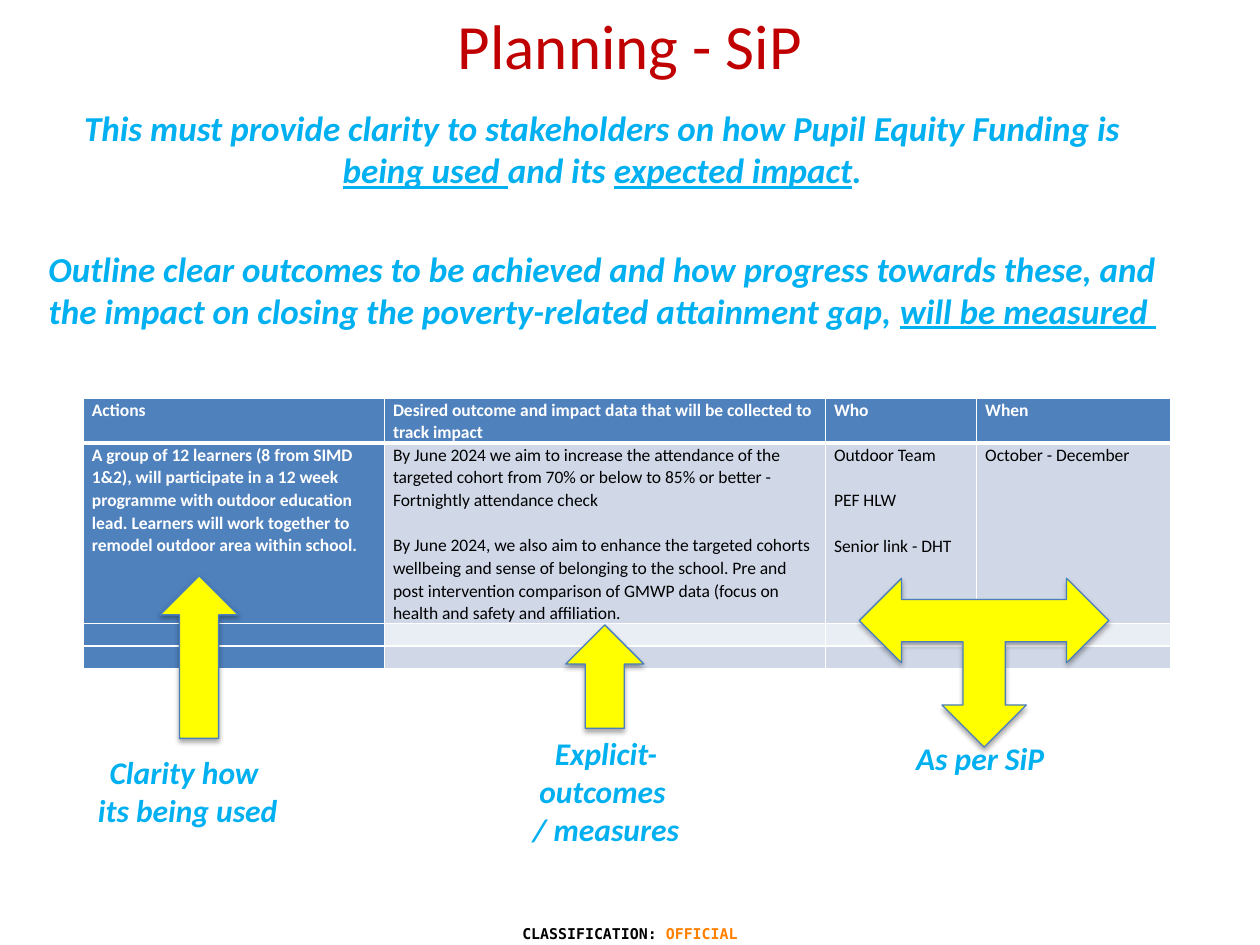
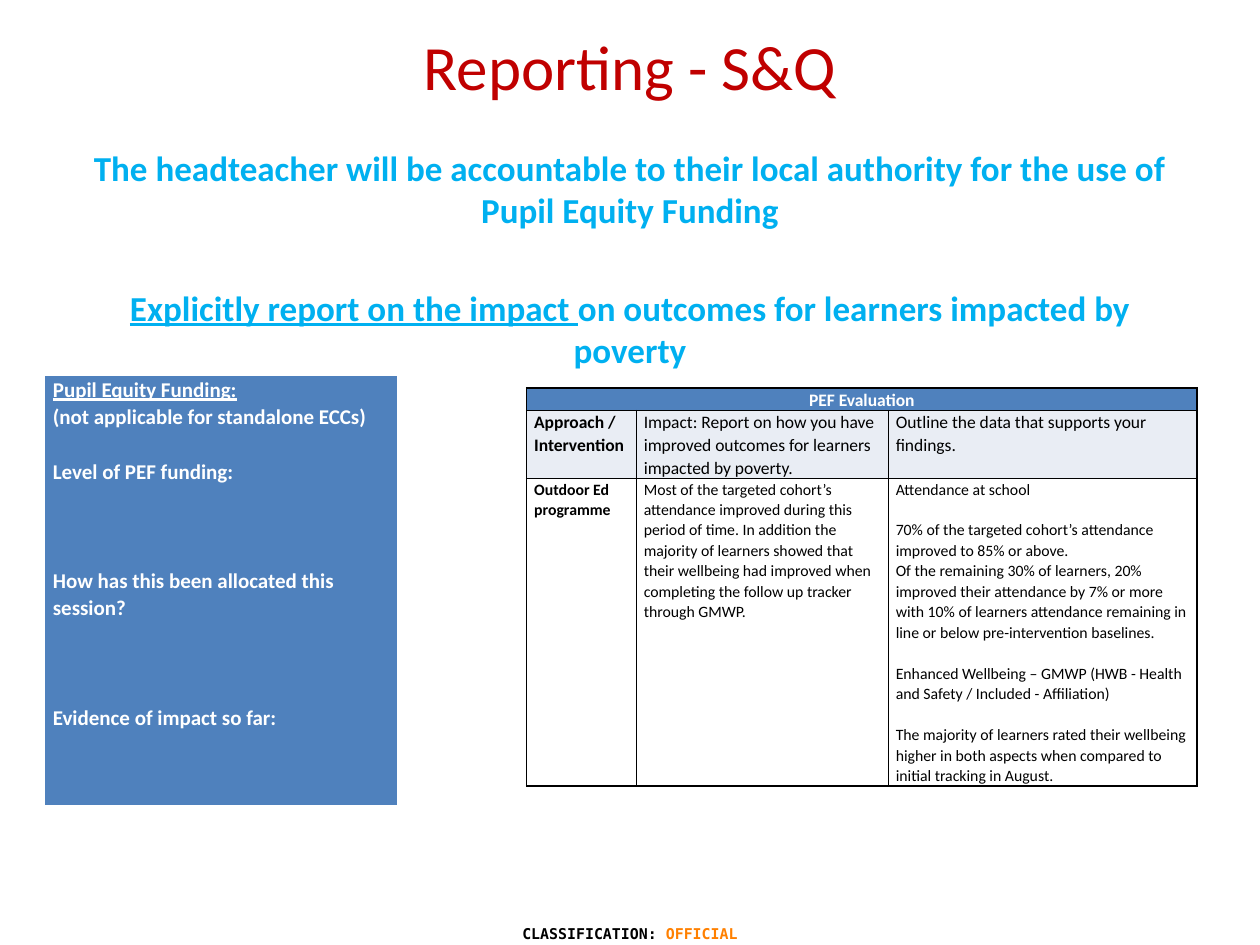
from dataclasses import dataclass
from typing import NamedTuple

from lxml.etree import SubElement
from pptx import Presentation
from pptx.dml.color import RGBColor
from pptx.enum.shapes import MSO_SHAPE as Preset
from pptx.enum.text import PP_ALIGN as Align
from pptx.oxml.ns import qn
from pptx.util import Inches, Pt

WIDTH, HEIGHT = Inches(10), Inches(7.5)
COLUMN, ROW = WIDTH / 100, HEIGHT / 75

RED = RGBColor(0xC0, 0x00, 0x00)
CYAN = RGBColor(0x00, 0xB0, 0xF0)
ORANGE = RGBColor(0xFF, 0x80, 0x00)
YELLOW = RGBColor(0xFF, 0xFF, 0x00)
BLACK = RGBColor(0x00, 0x00, 0x00)
WHITE = RGBColor(0xFF, 0xFF, 0xFF)
BLUE = RGBColor(0x4F, 0x81, 0xBD)
OUTLINE = RGBColor(0x4B, 0x7E, 0xBC)
PALE = RGBColor(0xD0, 0xD8, 0xE8)
PALER = RGBColor(0xE9, 0xED, 0xF4)

BLANK_LINE = 1.3
MARK = "_"


class Box(NamedTuple):
    left: float
    top: float
    width: float
    height: float

    def place(self) -> tuple[int, int, int, int]:
        return (round(self.left * COLUMN), round(self.top * ROW),
                round(self.width * COLUMN), round(self.height * ROW))


class Line(NamedTuple):
    text: str
    gap: float = 0


@dataclass(frozen=True)
class Cell:
    lines: tuple[Line, ...] = ()
    fill: RGBColor = BLUE
    color: RGBColor = WHITE
    bold: bool = True
    size: float = 10
    align: Align = Align.LEFT
    bottom: float = 1


@dataclass(frozen=True)
class Grid:
    left: float
    top: float
    columns: tuple[float, ...]
    rows: tuple[float, ...]
    border: RGBColor
    inset: float


@dataclass(frozen=True)
class Arrow:
    preset: Preset
    box: Box
    rotation: float = 0


@dataclass(frozen=True)
class Label:
    box: Box
    lines: tuple[Line, ...]


def lines(*texts: str, gap: float = 0) -> tuple[Line, ...]:
    return tuple(Line(text, gap if index else 0) for index, text in enumerate(texts))


def write(frame, content, *, size: float, color: RGBColor, font: str = "Calibri",
          bold: bool = False, italic: bool = False, align: Align = Align.CENTER,
          spacing: float = 1.0, accent: RGBColor | None = None) -> None:
    frame.word_wrap = True
    for index, line in enumerate(content):
        paragraph = frame.add_paragraph() if index else frame.paragraphs[0]
        paragraph.alignment = align
        paragraph.line_spacing = spacing
        if line.gap:
            paragraph.space_before = Pt(line.gap * size)
        for position, text in enumerate(line.text.split(MARK)):
            if not text:
                continue
            marked = position % 2 == 1
            run = paragraph.add_run()
            run.text = text
            run.font.name, run.font.size = font, Pt(size)
            run.font.bold, run.font.italic = bold, italic
            run.font.underline = marked and accent is None
            run.font.color.rgb = accent if marked and accent else color


def add_text(slide, box: Box, content, **text_format) -> None:
    write(slide.shapes.add_textbox(*box.place()).text_frame, content, **text_format)


def add_frame(presentation, title: str, title_top: float):
    slide = presentation.slides.add_slide(presentation.slide_layouts[6])
    add_text(slide, Box(0, 72.9, 100, 2.4), lines("CLASSIFICATION: _OFFICIAL"),
             size=8.5, color=BLACK, font="DejaVu Sans Mono", bold=True, accent=ORANGE)
    add_text(slide, Box(5, title_top, 90, 12.5), lines(title), size=36, color=RED)
    return slide


def add_message(slide, box: Box, *texts: str, italic: bool = False) -> None:
    add_text(slide, box, lines(*texts, gap=1.6), size=20, color=CYAN,
             bold=True, italic=italic)


def add_border(properties, side: str, color: RGBColor, points: float) -> None:
    border = SubElement(properties, qn(f"a:ln{side}"), w=str(Pt(points)))
    SubElement(SubElement(border, qn("a:solidFill")), qn("a:srgbClr"), val=str(color))


def fill_cell(cell, content: Cell, grid: Grid) -> None:
    cell.margin_left = cell.margin_right = round(grid.inset * COLUMN)
    cell.margin_top = cell.margin_bottom = 0
    properties = cell._tc.get_or_add_tcPr()
    for side in "LRTB":
        add_border(properties, side, grid.border, content.bottom if side == "B" else 1)
    cell.fill.solid()
    cell.fill.fore_color.rgb = content.fill
    write(cell.text_frame, content.lines, size=content.size, color=content.color,
          bold=content.bold, align=content.align, spacing=1.07)
    if not content.lines:
        end = SubElement(cell.text_frame.paragraphs[0]._p, qn("a:endParaRPr"))
        end.set("sz", str(round(content.size * 100)))


def add_grid(slide, grid: Grid, cells: list[list[Cell]]) -> None:
    box = Box(grid.left, grid.top, sum(grid.columns), sum(grid.rows))
    table = slide.shapes.add_table(len(grid.rows), len(grid.columns), *box.place()).table
    table.first_row = table.horz_banding = False
    for column, width in zip(table.columns, grid.columns):
        column.width = round(width * COLUMN)
    for row, height in zip(table.rows, grid.rows):
        row.height = round(height * ROW)
    for row_index, row_cells in enumerate(cells):
        if len(row_cells) == 1 < len(grid.columns):
            table.cell(row_index, 0).merge(table.cell(row_index, len(grid.columns) - 1))
        for column_index, content in enumerate(row_cells):
            fill_cell(table.cell(row_index, column_index), content, grid)


def add_arrow(slide, arrow: Arrow) -> None:
    shape = slide.shapes.add_shape(arrow.preset, *arrow.box.place())
    shape.rotation = arrow.rotation
    shape.fill.solid()
    shape.fill.fore_color.rgb = YELLOW
    shape.line.color.rgb = OUTLINE
    shape.line.width = Pt(0.75)
    shape.shadow.inherit = False
    effects = shape._element.spPr.find(qn("a:effectLst"))
    shadow = SubElement(effects, qn("a:outerShdw"), blurRad=str(Pt(3.1)),
                        dist=str(Pt(1.8)), dir="5400000", rotWithShape="0")
    color = SubElement(shadow, qn("a:srgbClr"), val=str(BLACK))
    SubElement(color, qn("a:alpha"), val="35000")


def build_planning(presentation) -> None:
    slide = add_frame(presentation, "Planning - SiP", 0)
    add_message(
        slide, Box(2.8, 8, 90, 20),
        "This must provide clarity to stakeholders on how Pupil Equity Funding is "
        "_being used _and its _expected impact_.",
        "Outline clear outcomes to be achieved and how progress towards these, and the "
        "impact on closing the poverty-related attainment gap, _will be measured _",
        italic=True)

    headings = ("Actions",
                "Desired outcome and impact data that will be collected to track impact",
                "Who", "When")
    action = ("A group of 12 learners (8 from SIMD 1&2), will participate in a 12 week "
              "programme with outdoor education lead. Learners will work together to "
              "remodel outdoor area within school.")
    details = (
        ("By June 2024 we aim to increase the attendance of the targeted cohort from 70% "
         "or below to 85% or better - Fortnightly attendance check",
         "By June 2024, we also aim to enhance the targeted cohorts wellbeing and sense of "
         "belonging to the school. Pre and post intervention comparison of GMWP data "
         "(focus on health and safety and affiliation."),
        ("Outdoor Team", "PEF HLW", "Senior link - DHT"),
        ("October - December",))
    add_grid(slide, Grid(6.6, 31.6, (23.9, 35, 12, 15.4), (3.5, 14.3, 1.8, 1.8), WHITE, 0.7), [
        [Cell(lines(heading), bottom=3) for heading in headings],
        [Cell(lines(action))] + [
            Cell(lines(*texts, gap=BLANK_LINE), PALE, BLACK, bold=False) for texts in details],
        *([Cell()] + [Cell(fill=fill)] * 3 for fill in (PALER, PALE)),
    ])

    for arrow in (Arrow(Preset.UP_ARROW, Box(12.7, 45.7, 6.2, 12.9)),
                  Arrow(Preset.UP_ARROW, Box(44.9, 49.6, 6.2, 8.2)),
                  Arrow(Preset.LEFT_RIGHT_UP_ARROW, Box(68.2, 45.9, 19.8, 13.4), 180)):
        add_arrow(slide, arrow)
    for label in (Label(Box(4.9, 59.3, 20, 7.1), lines("Clarity how ", "its being used")),
                  Label(Box(38.1, 57.8, 20, 10.1),
                        lines("Explicit-", "outcomes ", "/ measures")),
                  Label(Box(67.8, 58.2, 20, 4), lines("As per SiP"))):
        add_text(slide, label.box, label.lines, size=18, color=CYAN, bold=True, italic=True)


def build_reporting(presentation) -> None:
    slide = add_frame(presentation, "Reporting - S&Q", 1.7)
    add_message(
        slide, Box(5, 11.1, 90, 19),
        "The headteacher will be accountable to their local authority for the use of "
        "Pupil Equity Funding",
        "_Explicitly report on the impact _on outcomes for learners impacted by poverty")

    funding = (Line("_Pupil Equity Funding:_"),
               Line("(not applicable for standalone ECCs)"),
               Line("Level of PEF funding:", BLANK_LINE),
               Line("How has this been allocated this session?", 3 * BLANK_LINE),
               Line("Evidence of impact so far:", 3 * BLANK_LINE))
    add_grid(slide, Grid(3.5, 29.8, (28.1,), (34.3,), WHITE, 0.7),
             [[Cell(funding, size=12, bottom=3)]])

    impact = ("Most of the targeted cohort’s attendance improved during this period of time. "
              "In addition the majority of learners showed that their wellbeing had improved "
              "when completing the follow up tracker through GMWP.")
    findings = (
        Line("Attendance at school"),
        Line("70% of the targeted cohort’s attendance improved to 85% or above.", BLANK_LINE),
        Line("Of the remaining 30% of learners, 20% improved their attendance by 7% or more "
             "with 10% of learners attendance remaining in line or below pre-intervention "
             "baselines."),
        Line("Enhanced Wellbeing – GMWP (HWB - Health and Safety / Included - Affiliation)",
             BLANK_LINE),
        Line("The majority of learners rated their wellbeing higher in both aspects when "
             "compared to initial tracking in August.", BLANK_LINE))
    questions = ("Approach / Intervention",
                 "Impact: Report on how you have improved outcomes for learners impacted "
                 "by poverty.",
                 "Outline the data that supports your findings.")
    answers = (lines("Outdoor Ed programme"), lines(impact), findings)
    add_grid(slide, Grid(41.8, 30.8, (8.7, 20, 24.5), (1.8, 5.4, 24.4), BLACK, 0.6), [
        [Cell(lines("PEF Evaluation"), align=Align.CENTER)],
        [Cell(lines(question), PALER, BLACK, bold=index == 0)
         for index, question in enumerate(questions)],
        [Cell(answer, WHITE, BLACK, bold=index == 0, size=9)
         for index, answer in enumerate(answers)],
    ])


def main() -> None:
    presentation = Presentation()
    presentation.slide_width, presentation.slide_height = WIDTH, HEIGHT
    build_planning(presentation)
    build_reporting(presentation)
    presentation.save("out.pptx")


if __name__ == "__main__":
    main()
